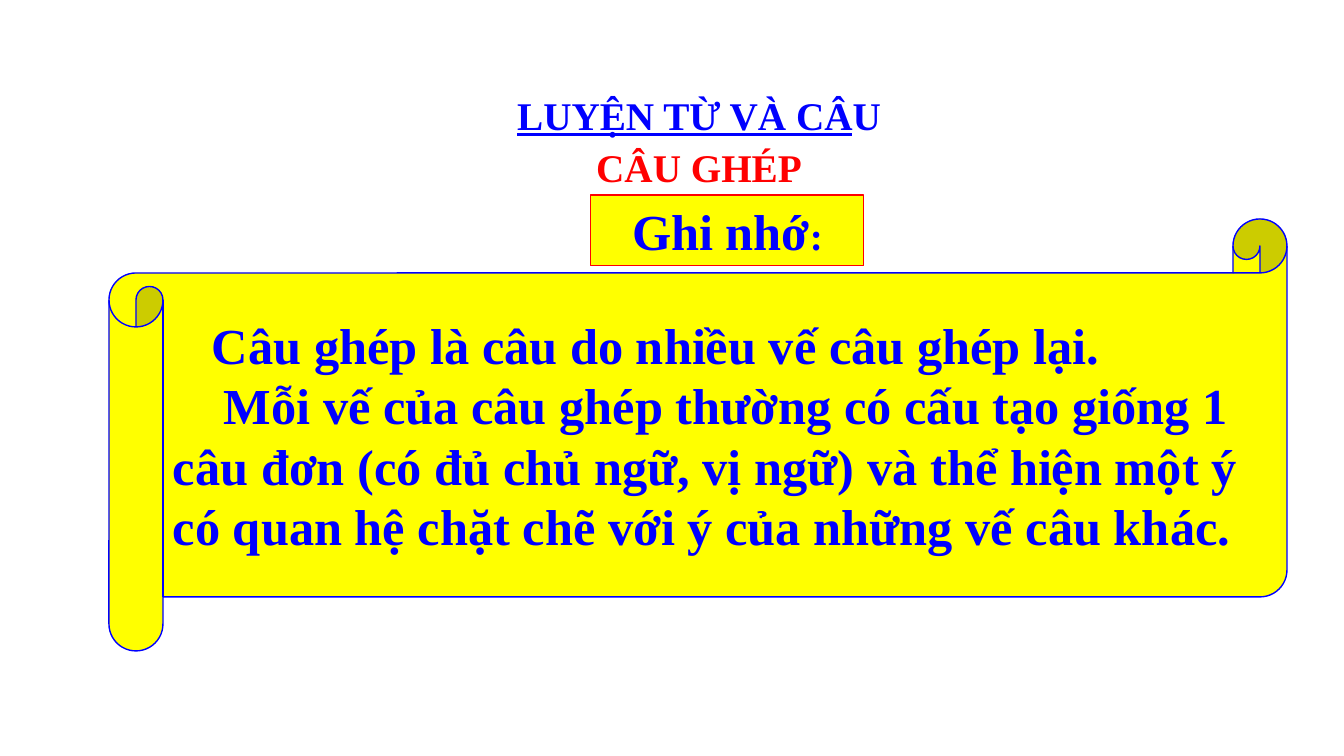
from pptx import Presentation
from pptx.dml.color import RGBColor
from pptx.enum.shapes import MSO_SHAPE
from pptx.enum.text import MSO_ANCHOR, MSO_AUTO_SIZE, PP_ALIGN
from pptx.util import Emu, Pt

RECTANGLE, SCROLL = MSO_SHAPE.RECTANGLE, MSO_SHAPE.HORIZONTAL_SCROLL
LEFT, CENTER = PP_ALIGN.LEFT, PP_ALIGN.CENTER
TOP, MIDDLE = MSO_ANCHOR.TOP, MSO_ANCHOR.MIDDLE
FIT_SHAPE = MSO_AUTO_SIZE.SHAPE_TO_FIT_TEXT

WHITE = RGBColor(0xFF, 0xFF, 0xFF)
YELLOW = RGBColor(0xFF, 0xFF, 0x00)
BLUE = RGBColor(0x00, 0x00, 0xFF)
RED = RGBColor(0xFF, 0x00, 0x00)

PAGE_WIDTH, PAGE_HEIGHT = 1344, 756
SCALE = 12192000 / PAGE_WIDTH


def px(length):
    return Emu(round(length * SCALE))


class Page:
    font = "Times New Roman"
    small, large = 28, 36

    def __init__(self, deck):
        self.slide = deck.slides.add_slide(deck.slide_layouts[6])
        fill = self.slide.background.fill
        fill.solid()
        fill.fore_color.rgb = WHITE

    def panel(self, kind, place, line_color, line_width):
        shape = self.slide.shapes.add_shape(kind, *map(px, place))
        shape.shadow.inherit = False
        shape.fill.solid()
        shape.fill.fore_color.rgb = YELLOW
        shape.line.color.rgb = line_color
        shape.line.width = Pt(line_width)
        return shape

    def heading(self, place, spans, color):
        box = self.slide.shapes.add_textbox(*map(px, place))
        self.add_text(box, [(0, spans)], color, CENTER)

    def add_text(self, box, paragraphs, color, align, anchor=TOP, fit=True):
        """Fill a box from (first-line indent, [(text, size, underline)]) pairs."""
        frame = box.text_frame
        frame.word_wrap = True
        frame.vertical_anchor = anchor
        if fit:
            frame.auto_size = FIT_SHAPE
        for index, (indent, spans) in enumerate(paragraphs):
            para = frame.add_paragraph() if index else frame.paragraphs[0]
            para.alignment = align
            if indent:
                properties = para._p.get_or_add_pPr()
                properties.set("marL", "0")
                properties.set("indent", str(px(indent)))
            for text, size, underline in spans:
                span = para.add_run()
                span.text = text
                span.font.name = self.font
                span.font.size = Pt(size)
                span.font.bold = True
                span.font.underline = underline
                span.font.color.rgb = color


def main():
    deck = Presentation()
    deck.slide_width, deck.slide_height = px(PAGE_WIDTH), px(PAGE_HEIGHT)
    page = Page(deck)
    small, large = page.small, page.large

    scroll = page.panel(SCROLL, (109, 219, 1178, 432), BLUE, 1)
    rules = [
        (39, [("Câu ghép là câu do nhiều vế câu ghép lại.", large, False)]),
        (51, [("Mỗi vế của câu ghép thường có cấu tạo giống 1 câu đơn "
               "(có đủ chủ ngữ, vị ngữ) và thể hiện một ý có quan hệ "
               "chặt chẽ với ý của những vế câu khác.", large, False)]),
    ]
    page.add_text(scroll, rules, BLUE, LEFT, MIDDLE, fit=False)

    label = page.panel(RECTANGLE, (591, 195, 273, 71), RED, 0.75)
    page.add_text(label, [(0, [("Ghi nhớ", large, False), (":", small, False)])],
                  BLUE, CENTER)

    page.heading((457, 86, 484, 57),
                 [("LUYỆN TỪ VÀ CÂ", small, True), ("U", small, False)], BLUE)
    page.heading((457, 138, 484, 57), [("CÂU GHÉP", small, False)], RED)

    deck.save("out.pptx")


if __name__ == "__main__":
    main()
